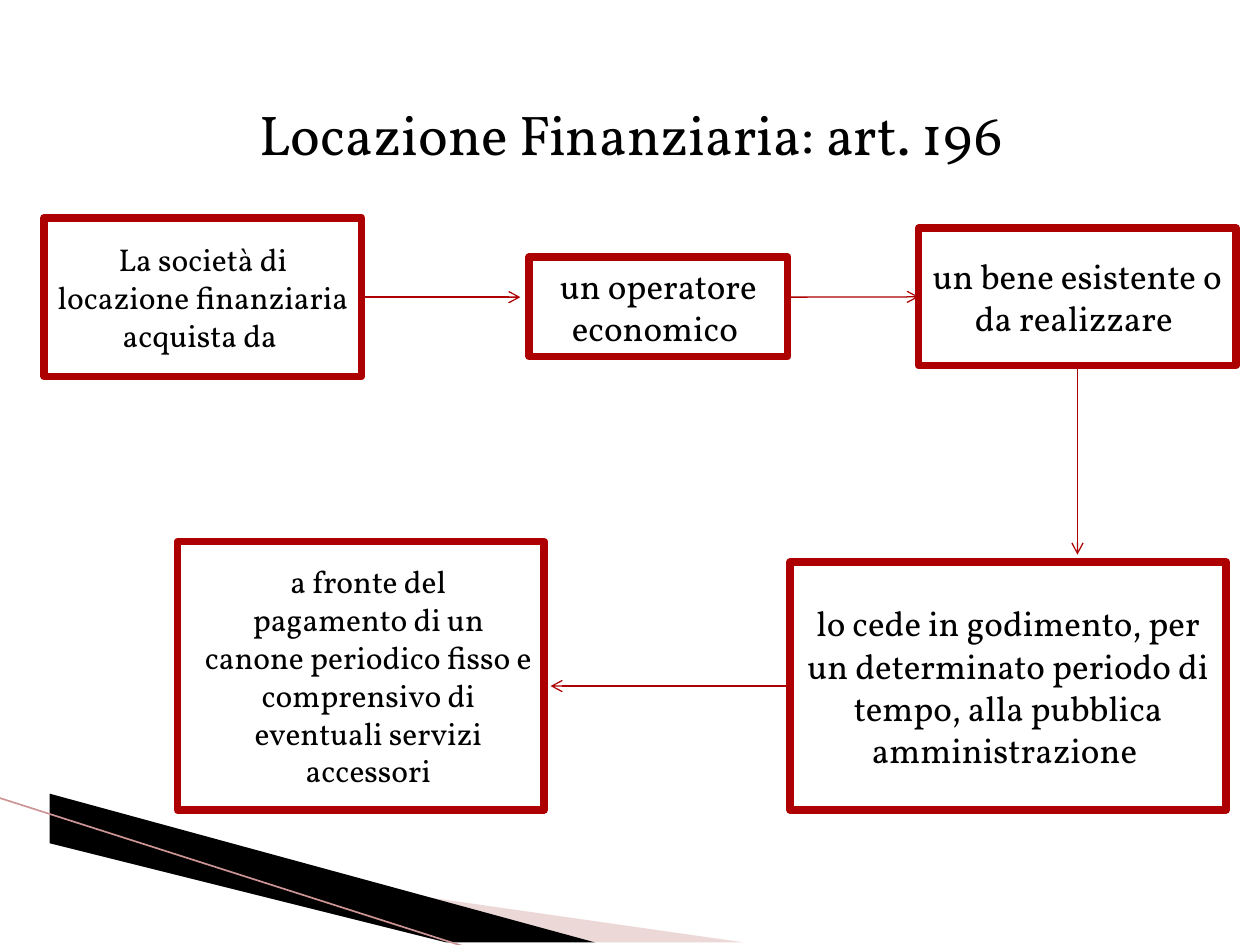
from dataclasses import dataclass
from typing import Optional

from lxml.etree import SubElement
from pptx import Presentation
from pptx.dml.color import RGBColor
from pptx.enum.shapes import MSO_CONNECTOR as Connector, MSO_SHAPE as Preset
from pptx.enum.text import MSO_ANCHOR as Anchor, MSO_AUTO_SIZE as AutoSize, PP_ALIGN as Align
from pptx.oxml.ns import qn
from pptx.util import Cm, Pt

COLORS = {
    "text": "000000",
    "box": "FFFFFF",
    "red": "AD0101",
    "pink": "D29E9E",
    "black": "000000",
    "edge": "CD9595",
}
FONT = "Vollkorn"
TOP, LEFT, BOTTOM, RIGHT = range(4)


@dataclass
class Box:
    name: str
    left: float
    top: float
    width: float
    height: float
    text: str
    size: int = 20
    indent: float = 0


@dataclass
class Arrow:
    start: tuple[float, float]
    end: tuple[float, float]
    source: Optional[tuple[str, int]] = None
    target: Optional[tuple[str, int]] = None


@dataclass
class Wedge:
    points: list[tuple[float, float]]
    color: str
    opacity: int = 100


BOXES = [
    Box("company", 0.89, 4.39, 6.4, 3.2,
        "La società di locazione finanziaria\nacquista da ", size=18),
    Box("operator", 10.67, 5.18, 5.21, 2.01, "un operatore economico "),
    Box("asset", 18.52, 4.6, 6.4, 2.77, "un bene esistente o da realizzare "),
    Box("transfer", 15.93, 11.33, 8.79, 5,
        "lo cede in godimento, per un determinato periodo di tempo, "
        "alla pubblica amministrazione "),
    Box("fee", 3.58, 10.92, 7.39, 5.41,
        "a fronte del\npagamento di un canone periodico fisso e "
        "comprensivo di eventuali servizi accessori", size=18, indent=0.3),
]
ARROWS = [
    Arrow((7.29, 5.99), (10.49, 5.99), source=("company", RIGHT)),
    Arrow((15.93, 5.99), (18.52, 5.99), target=("asset", LEFT)),
    Arrow((21.72, 7.37), (21.72, 11.18), source=("asset", BOTTOM)),
    Arrow((15.93, 13.83), (11.1, 13.83), source=("transfer", LEFT)),
]
WEDGES = [
    Wedge([(1.4, 16.54), (15.11, 19.08), (11.58, 19.08), (1.4, 16.51)], "pink", 40),
    Wedge([(1.35, 16.48), (11.61, 19.08), (9.45, 19.1), (1.37, 16.51)], "black"),
]


def rgb(name: str) -> RGBColor:
    return RGBColor.from_string(COLORS[name])


def write_text(shape, text: str, *, size: int, color: str = "text", indent: float = 0) -> None:
    frame = shape.text_frame
    frame.word_wrap = True
    frame.auto_size = AutoSize.NONE
    frame.vertical_anchor = Anchor.MIDDLE
    frame.text = text
    for paragraph in frame.paragraphs:
        paragraph.alignment = Align.CENTER
        if indent:
            properties = paragraph._p.get_or_add_pPr()
            properties.set("marL", str(Cm(indent)))
            properties.set("indent", "0")
        paragraph.font.name = FONT
        paragraph.font.size = Pt(size)
        paragraph.font.color.rgb = rgb(color)


def draw_box(slide, box: Box):
    shape = slide.shapes.add_shape(
        Preset.RECTANGLE, Cm(box.left), Cm(box.top), Cm(box.width), Cm(box.height))
    shape.shadow.inherit = False
    shape.fill.solid()
    shape.fill.fore_color.rgb = rgb("box")
    shape.line.color.rgb = rgb("red")
    shape.line.width = Pt(4.33)
    write_text(shape, box.text, size=box.size, indent=box.indent)
    return shape


def draw_line(slide, start: tuple[float, float], end: tuple[float, float],
              color: str, width: float):
    line = slide.shapes.add_connector(
        Connector.STRAIGHT, *(Cm(value) for value in (*start, *end)))
    line.line.color.rgb = rgb(color)
    line.line.width = Pt(width)
    SubElement(line._element.spPr, qn("a:effectLst"))
    return line


def draw_arrow(slide, arrow: Arrow, shapes: dict) -> None:
    line = draw_line(slide, arrow.start, arrow.end, "red", 0.75)
    SubElement(line.line._get_or_add_ln(), qn("a:tailEnd"), type="arrow")
    if arrow.source:
        name, side = arrow.source
        line.begin_connect(shapes[name], side)
    if arrow.target:
        name, side = arrow.target
        line.end_connect(shapes[name], side)


def draw_wedge(slide, wedge: Wedge) -> None:
    first, *others = wedge.points
    builder = slide.shapes.build_freeform(*first, scale=Cm(1))
    builder.add_line_segments(others, close=True)
    shape = builder.convert_to_shape()
    shape.shadow.inherit = False
    shape.line.fill.background()
    shape.fill.solid()
    shape.fill.fore_color.rgb = rgb(wedge.color)
    if wedge.opacity < 100:
        color = shape._element.spPr.find(f"{qn('a:solidFill')}/{qn('a:srgbClr')}")
        SubElement(color, qn("a:alpha"), val=str(wedge.opacity * 1000))


def main() -> None:
    presentation = Presentation()
    presentation.slide_width = Cm(25.4)
    presentation.slide_height = Cm(19.05)
    slide = presentation.slides.add_slide(presentation.slide_layouts[5])

    for wedge in WEDGES:
        draw_wedge(slide, wedge)
    draw_line(slide, (-0.03, 16.08), (9.42, 19.1), "edge", 0.95)

    title = slide.shapes.title
    title.left, title.top = Cm(1.3), Cm(1.73)
    title.width, title.height = Cm(22.86), Cm(3.18)
    write_text(title, "Locazione Finanziaria: art. 196", size=32)
    title.text_frame.margin_bottom = Cm(1.42)

    shapes = {box.name: draw_box(slide, box) for box in BOXES}
    for arrow in ARROWS:
        draw_arrow(slide, arrow, shapes)

    presentation.save("out.pptx")


if __name__ == "__main__":
    main()
